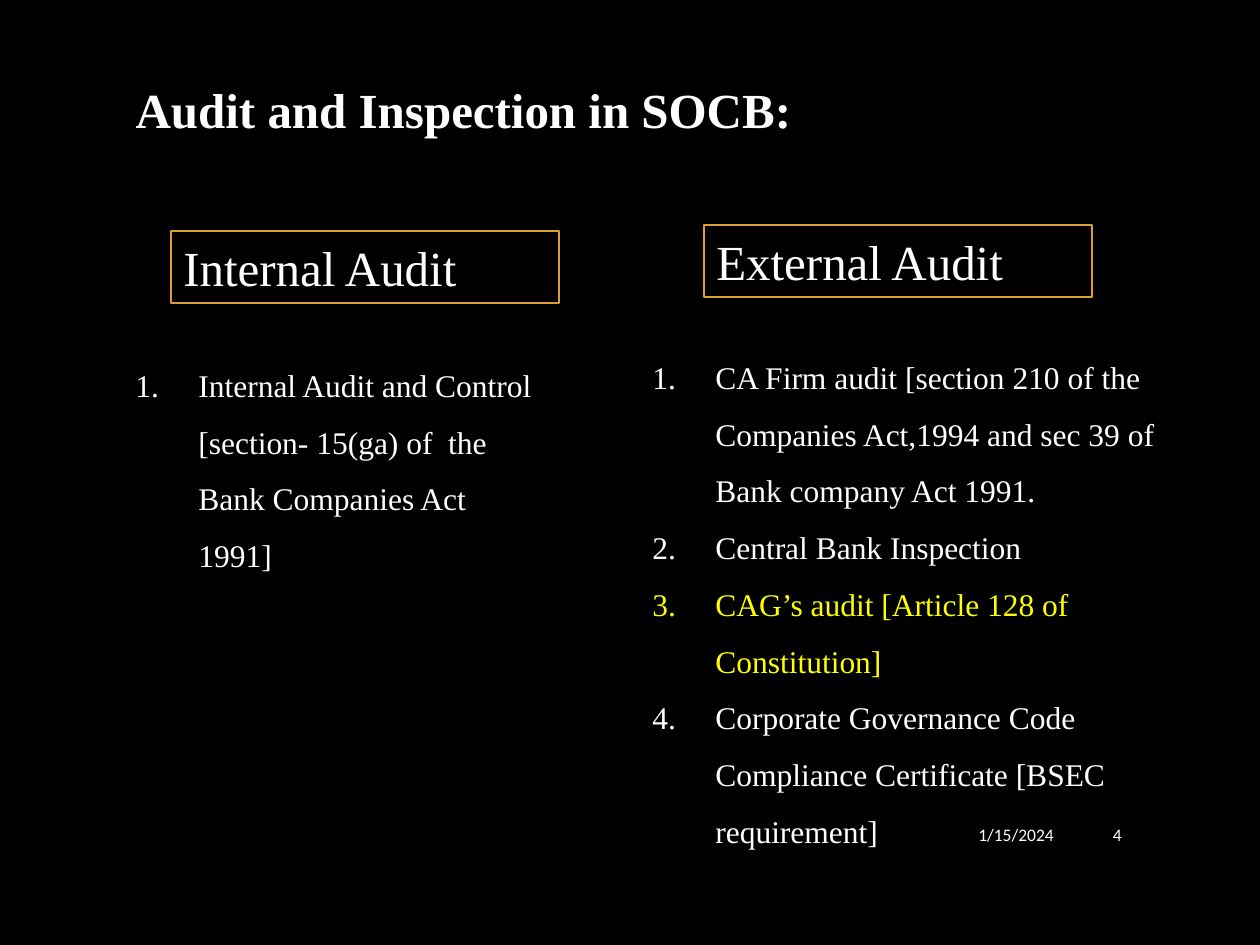
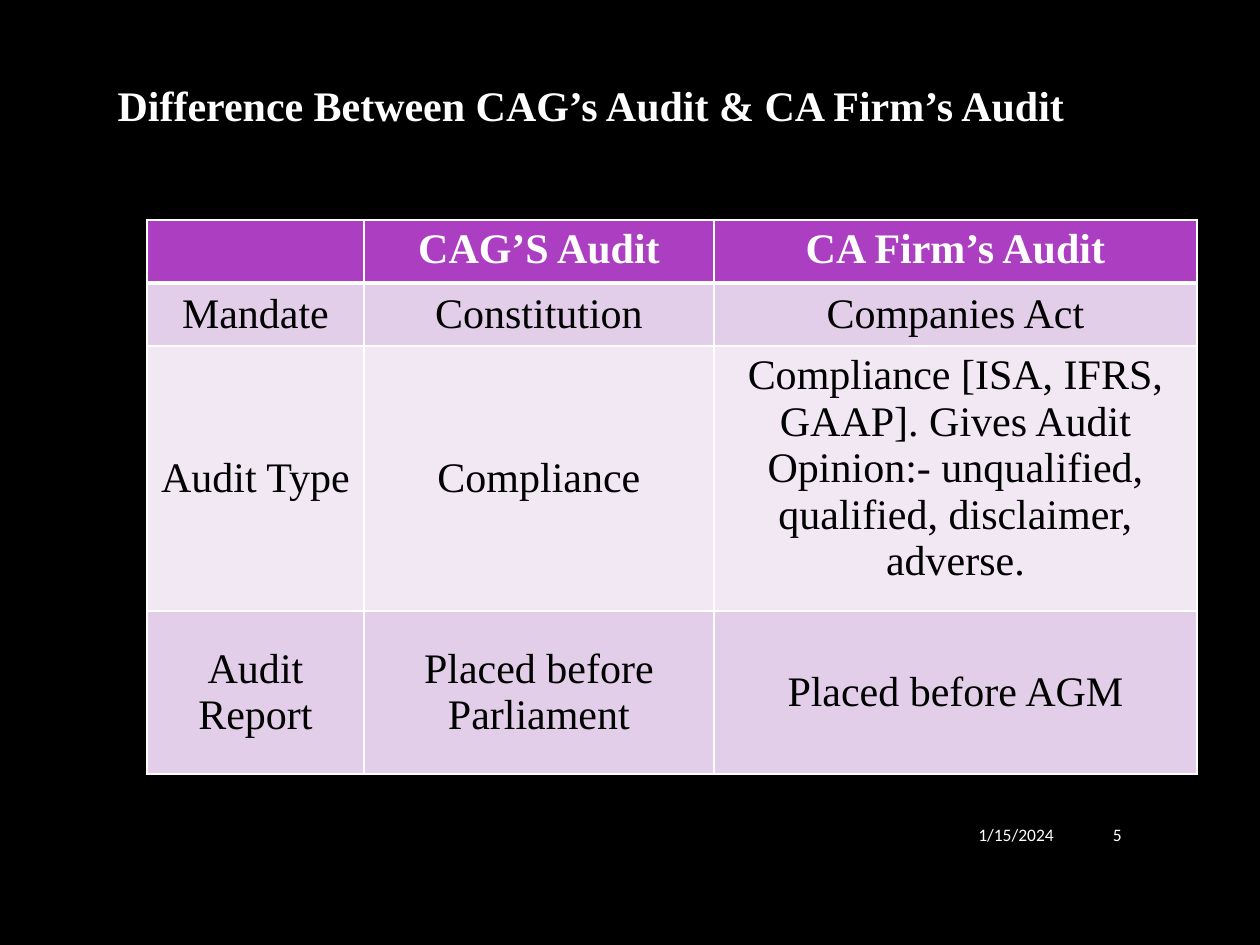
from lxml.etree import SubElement
from pptx import Presentation
from pptx.dml.color import RGBColor
from pptx.enum.shapes import MSO_SHAPE as SHAPE
from pptx.enum.text import MSO_ANCHOR as ANCHOR, MSO_AUTO_SIZE as SIZE, PP_ALIGN as ALIGN
from pptx.oxml.ns import qn
from pptx.util import Pt

PX = 914400 / 126
WHITE = RGBColor(0xFF, 0xFF, 0xFF)
BLACK = RGBColor(0x00, 0x00, 0x00)
YELLOW = RGBColor(0xFF, 0xFF, 0x00)
GOLD = RGBColor(0xDD, 0x9D, 0x31)
PURPLE = RGBColor(0xAC, 0x3E, 0xC1)
LILAC = RGBColor(0xE3, 0xCE, 0xE9)
PALE = RGBColor(0xF1, 0xE8, 0xF4)
SERIF = "Times New Roman"
DATE = "1/15/2024"


def px(*nums):
    """Turn pixel lengths into EMU."""
    return [round(n * PX) for n in nums]


def write(frame, *lines, size=24, font=SERIF, color=WHITE, bold=False,
          align=ALIGN.LEFT, anchor=ANCHOR.TOP, steps=False, marked=None):
    """Fill a frame, one paragraph a line; steps numbers them, marked turns one yellow."""
    frame.word_wrap = True
    frame.auto_size = SIZE.NONE
    frame.vertical_anchor = anchor
    for i, line in enumerate(lines):
        para = frame.paragraphs[0] if i == 0 else frame.add_paragraph()
        para.alignment = align
        if steps:
            para.line_spacing = 1.5
            props = para._p.get_or_add_pPr()
            indent = px(63)[0]
            props.set("marL", str(indent))
            props.set("indent", str(-indent))
            SubElement(props, qn("a:buFont"), typeface="+mj-lt")
            SubElement(props, qn("a:buAutoNum"), type="arabicPeriod")
        run = para.add_run()
        run.text = line
        run.font.size = Pt(size)
        run.font.name = font
        run.font.bold = bold
        run.font.color.rgb = YELLOW if i == marked else color


prs = Presentation()
prs.slide_width, prs.slide_height = px(1260, 945)
back = prs.slide_master.background.fill
back.solid()
back.fore_color.rgb = BLACK

# Titles and footers
heads = [
    ("Audit and Inspection in SOCB:", 28, (123, 73, 790, 72), "4"),
    ("Difference Between CAG’s Audit & CA Firm’s Audit", 24, (105, 73, 987, 63), "5"),
]
for text, size, place, page in heads:
    slide = prs.slides.add_slide(prs.slide_layouts[5])
    title = slide.shapes.title
    title.left, title.top, title.width, title.height = px(*place)
    write(title.text_frame, text, size=size, bold=True)
    for note, left, wide in [(DATE, 898, 168), (page, 1076, 58)]:
        foot = slide.shapes.add_textbox(*px(left, 809, wide, 52))
        write(foot.text_frame, note, size=10, font="Calibri",
              align=ALIGN.RIGHT, anchor=ANCHOR.MIDDLE)

kinds, versus = prs.slides

# Two kinds of audit
columns = [
    ("Internal Audit", (171, 231), (123, 341, 436, 242), None,
     ["Internal Audit and Control [section- 15(ga) of  the Bank Companies Act 1991]"]),
    ("External Audit", (704, 225), (640, 333, 577, 528), 2,
     ["CA Firm audit [section 210 of the Companies Act,1994 and sec 39 of "
      "Bank company Act 1991.",
      "Central Bank Inspection",
      "CAG’s audit [Article 128 of Constitution]",
      "Corporate Governance Code Compliance Certificate [BSEC requirement]"]),
]
for name, spot, place, marked, items in columns:
    box = kinds.shapes.add_shape(SHAPE.RECTANGLE, *px(*spot, 388, 72))
    box.shadow.inherit = False
    box.fill.background()
    box.line.color.rgb = GOLD
    box.line.width = Pt(0.75)
    write(box.text_frame, name, size=28)
    listing = kinds.shapes.add_textbox(*px(*place))
    write(listing.text_frame, *items, size=18, steps=True, marked=marked)

# Comparison table
rows = [
    ("", "CAG’S Audit", "CA Firm’s Audit"),
    ("Mandate", "Constitution", "Companies Act"),
    ("Audit Type", "Compliance",
     "Compliance [ISA, IFRS, GAAP]. Gives Audit Opinion:- unqualified, "
     "qualified, disclaimer, adverse."),
    ("Audit Report", "Placed before Parliament", "Placed before AGM"),
]
wides = px(217, 350, 483)
talls = px(63, 63, 265, 163)
fills = [PURPLE, LILAC, PALE, LILAC]
frame = versus.shapes.add_table(4, 3, *px(147, 220), sum(wides), sum(talls))
table = frame.table
table.horz_banding = False
for col, wide in zip(table.columns, wides):
    col.width = wide
for r, texts in enumerate(rows):
    table.rows[r].height = talls[r]
    for c, text in enumerate(texts):
        cell = table.cell(r, c)
        props = cell._tc.get_or_add_tcPr()
        for side in "LRTB":
            thick = (r, side) in [(0, "B"), (1, "T")]
            edge = SubElement(props, qn(f"a:ln{side}"), w=str(Pt(3 if thick else 1)))
            paint = SubElement(edge, qn("a:solidFill"))
            SubElement(paint, qn("a:srgbClr"), val=str(WHITE))
        cell.fill.solid()
        cell.fill.fore_color.rgb = fills[r]
        if text:
            write(cell.text_frame, text, color=BLACK if r else WHITE,
                  bold=r == 0, align=ALIGN.CENTER)
        top = r == 0 or (r, c) == (2, 2)
        cell.vertical_anchor = ANCHOR.TOP if top else ANCHOR.MIDDLE

prs.save("out.pptx")
